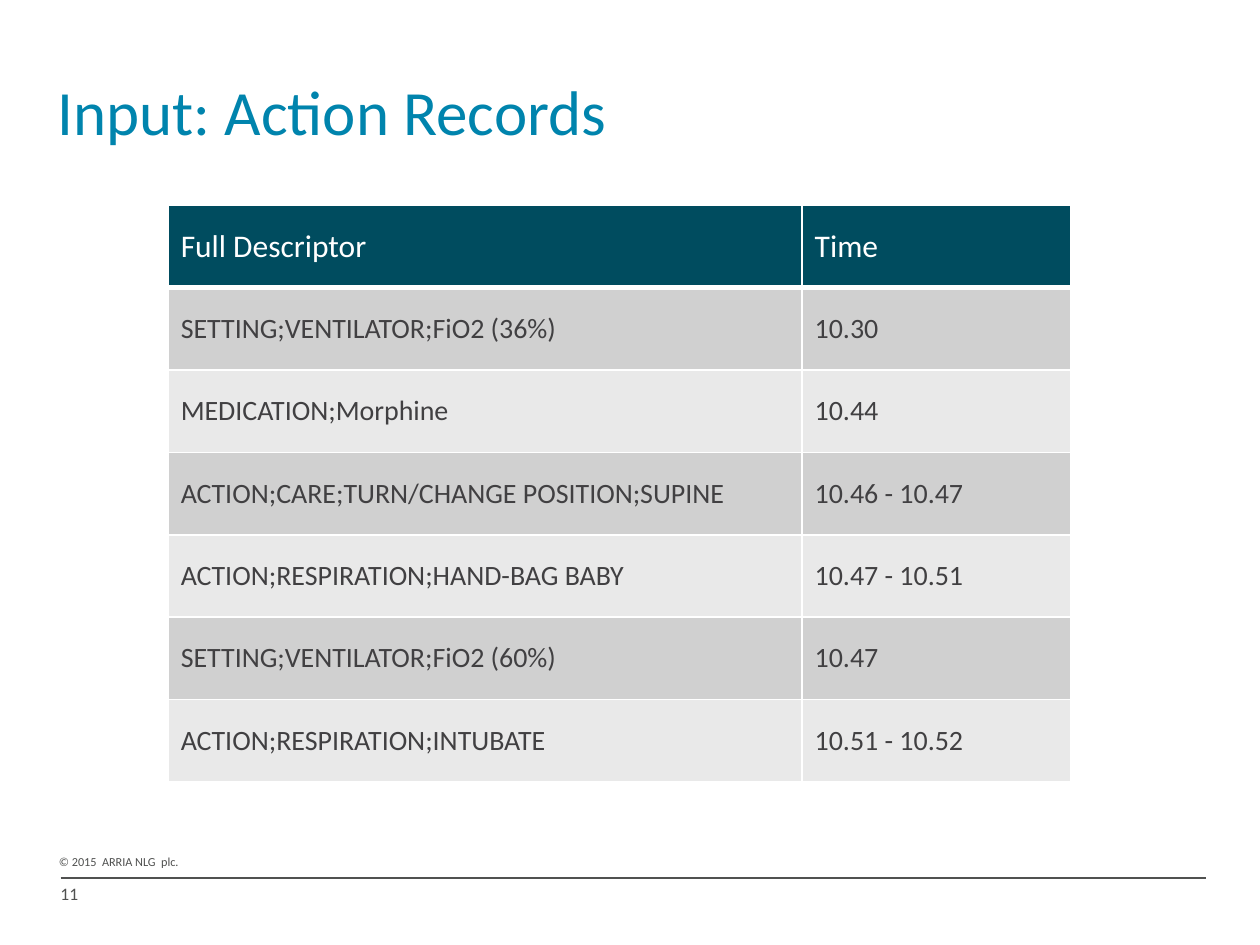
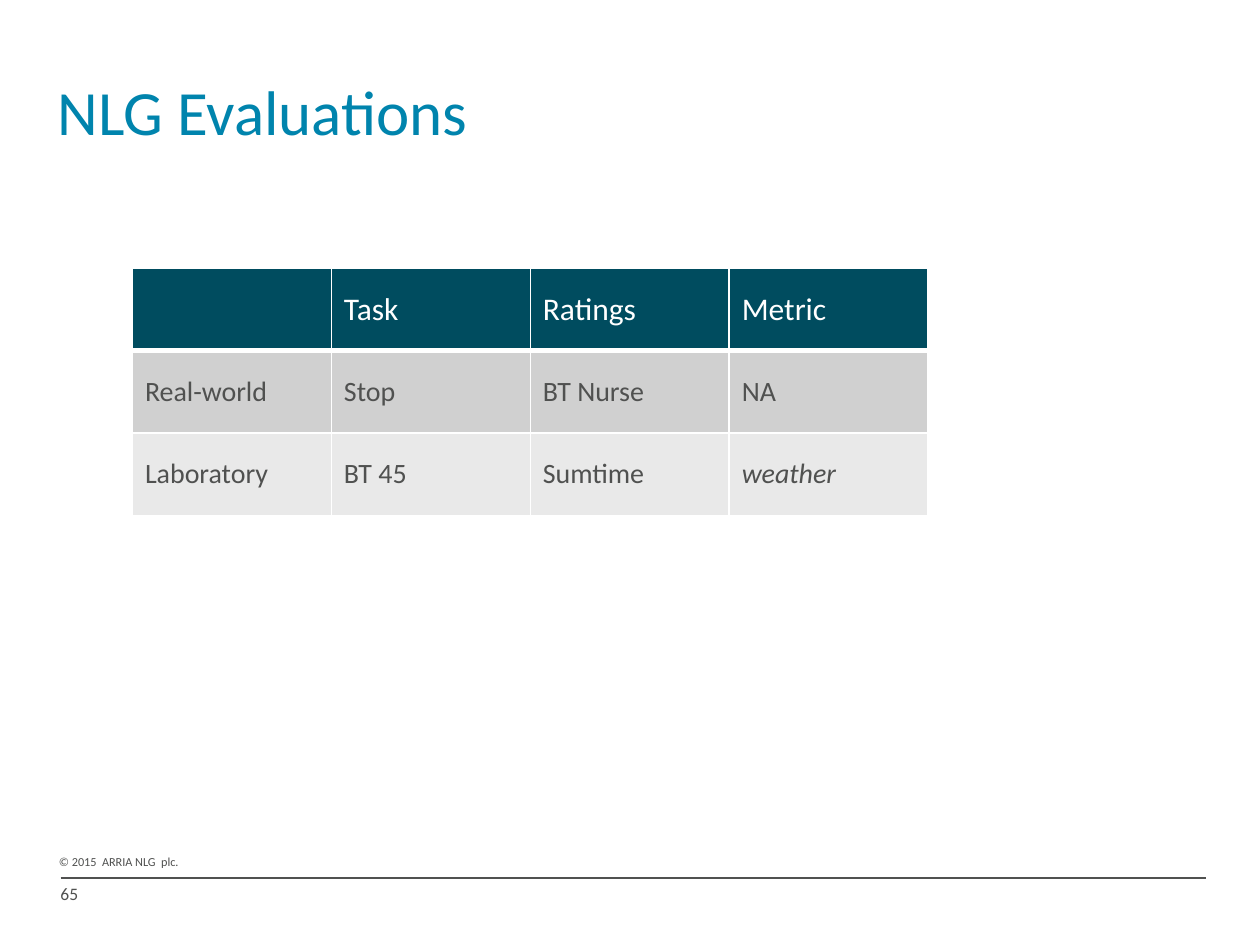
from lxml import etree
from pptx import Presentation
from pptx.dml.color import RGBColor
from pptx.enum import shapes, text
from pptx.oxml import ns
from pptx.util import Cm, Pt

FONT = "Calibri"
TITLE_BLUE = RGBColor(0x00, 0x84, 0xAD)
HEADER_TEAL = RGBColor(0x00, 0x4C, 0x5F)
WHITE = RGBColor(0xFF, 0xFF, 0xFF)
GREY_TEXT = RGBColor(0x50, 0x51, 0x50)
DARK_TEXT = RGBColor(0x41, 0x40, 0x42)
ROW_BANDS = (RGBColor(0xD0, 0xD0, 0xD0), RGBColor(0xE9, 0xE9, 0xE9))

TITLE_ONLY = 5
ROW_HEIGHT = Cm(1.66)
TITLE_BOX = (Cm(0.91), Cm(0.64), Cm(23.32), Cm(3.18))
FOOTER_BOX = (Cm(0.94), Cm(17.09), Cm(23.37), Cm(1.2))

ACTION_RECORDS = [
    ("Full Descriptor", "Time"),
    ("SETTING;VENTILATOR;FiO2 (36%)", "10.30"),
    ("MEDICATION;Morphine", "10.44"),
    ("ACTION;CARE;TURN/CHANGE POSITION;SUPINE", "10.46 - 10.47"),
    ("ACTION;RESPIRATION;HAND-BAG BABY", "10.47 - 10.51"),
    ("SETTING;VENTILATOR;FiO2 (60%)", "10.47"),
    ("ACTION;RESPIRATION;INTUBATE", "10.51 - 10.52"),
]
EVALUATIONS = [
    ("", "Task", "Ratings", "Metric"),
    ("Real-world", "Stop", "BT Nurse", "NA"),
    ("Laboratory", "BT 45", "Sumtime", "weather"),
]


def add_run(paragraph, wording, size, color, italic=False):
    run = paragraph.add_run()
    run.text = wording
    font = run.font
    font.name, font.size, font.color.rgb = FONT, Pt(size), color
    font.bold, font.italic = False, italic


def add_title(slide, wording, box):
    title = slide.shapes.title
    title.left, title.top, title.width, title.height = box
    title.text_frame.vertical_anchor = text.MSO_ANCHOR.MIDDLE
    paragraph = title.text_frame.paragraphs[0]
    paragraph.alignment = text.PP_ALIGN.LEFT
    add_run(paragraph, wording, 36, TITLE_BLUE)


def add_footer(slide, number, box):
    """Place the copyright line, the rule and the slide number in the box."""
    left, top, width, height = box
    rule_top = top + Cm(0.61)

    copyright_line = slide.shapes.add_textbox(left, top, Cm(3.02), Cm(0.56))
    copyright_line.text_frame.word_wrap = False
    add_run(copyright_line.text_frame.paragraphs[0], "© 2015  ARRIA NLG  plc.", 7, GREY_TEXT)

    rule = slide.shapes.add_connector(
        shapes.MSO_CONNECTOR.STRAIGHT, left + Cm(0.28), rule_top, left + width, rule_top)
    rule.line.color.rgb, rule.line.width = GREY_TEXT, Pt(0.75)
    etree.SubElement(rule._element.spPr, ns.qn("a:effectLst"))

    page = slide.shapes.add_textbox(left + Cm(0.03), rule_top - Cm(0.02), Cm(1.14), height - Cm(0.59))
    page.text_frame.word_wrap = True
    add_run(page.text_frame.paragraphs[0], str(number), 10, GREY_TEXT)


def set_borders(cell, top, bottom):
    """Give the cell white borders, 1 pt at the sides; call before filling it."""
    properties = cell._tc.get_or_add_tcPr()
    for side, width in (("L", 1), ("R", 1), ("T", top), ("B", bottom)):
        line = etree.SubElement(properties, ns.qn(f"a:ln{side}"), w=str(Pt(width)))
        fill = etree.SubElement(line, ns.qn("a:solidFill"))
        etree.SubElement(fill, ns.qn("a:srgbClr"), val=str(WHITE))


def add_banded_table(slide, rows, left, top, column_widths, body_color, italics=()):
    frame = slide.shapes.add_table(
        len(rows), len(column_widths), left, top, sum(column_widths), ROW_HEIGHT * len(rows))
    table = frame.table
    for column, width in zip(table.columns, column_widths):
        column.width = width
    for r, row in enumerate(rows):
        table.rows[r].height = ROW_HEIGHT
        header = r == 0
        for c, wording in enumerate(row):
            cell = table.cell(r, c)
            cell.vertical_anchor = text.MSO_ANCHOR.MIDDLE
            set_borders(cell, top=3 if r == 1 else 1, bottom=3 if header else 1)
            cell.fill.solid()
            cell.fill.fore_color.rgb = HEADER_TEAL if header else ROW_BANDS[(r - 1) % 2]
            if wording:
                add_run(cell.text_frame.paragraphs[0], wording, 18 if header else 16,
                        WHITE if header else body_color, wording in italics)


def add_table_slide(deck, title, number, **table):
    slide = deck.slides.add_slide(deck.slide_layouts[TITLE_ONLY])
    add_footer(slide, number, FOOTER_BOX)
    add_title(slide, title, TITLE_BOX)
    add_banded_table(slide, **table)


def main():
    deck = Presentation()
    deck.slide_width, deck.slide_height = Cm(25.4), Cm(19.05)
    add_table_slide(deck, "Input: Action Records", 11, rows=ACTION_RECORDS,
                    left=Cm(3.39), top=Cm(4.14),
                    column_widths=[Cm(12.78), Cm(5.41)], body_color=DARK_TEXT)
    add_table_slide(deck, "NLG Evaluations", 65, rows=EVALUATIONS,
                    left=Cm(2.67), top=Cm(5.41),
                    column_widths=[Cm(4.01)] * 4, body_color=GREY_TEXT, italics=("weather",))
    deck.save("out.pptx")


if __name__ == "__main__":
    main()
